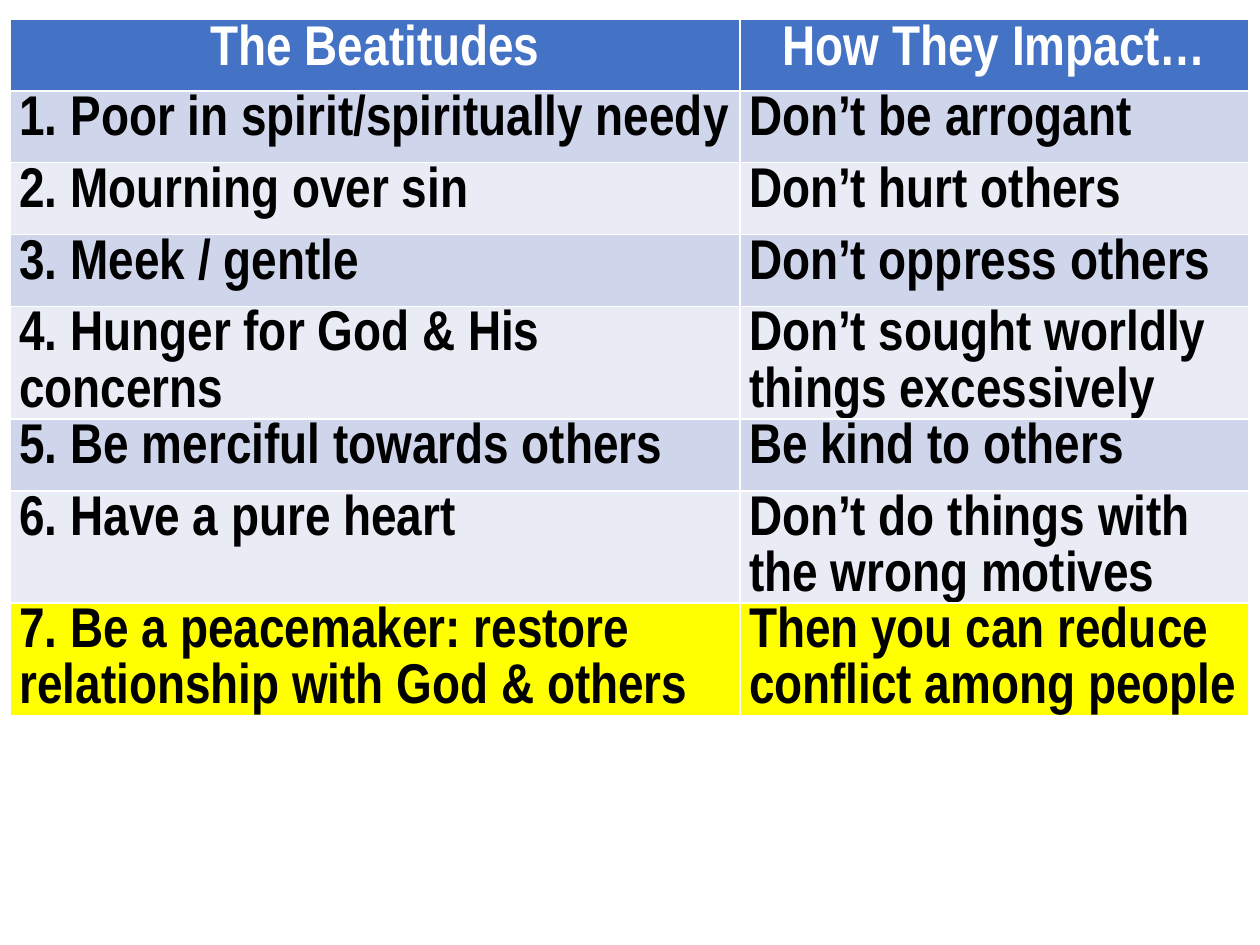
"""Build a slide with a table of the Beatitudes and their impact."""
from pptx import Presentation
from pptx.dml.color import RGBColor
from pptx.enum.text import PP_ALIGN
from pptx.util import Cm, Pt

CENTER, LEFT = PP_ALIGN.CENTER, PP_ALIGN.LEFT

ROWS = [
    ("The Beatitudes", "How They Impact…"),
    ("1. Poor in spirit/spiritually needy", "Don’t be arrogant"),
    ("2. Mourning over sin", "Don’t hurt others"),
    ("3. Meek / gentle", "Don’t oppress others"),
    ("4. Hunger for God & His concerns", "Don’t sought worldly things excessively"),
    ("5. Be merciful towards others", "Be kind to others"),
    ("6. Have a pure heart", "Don’t do things with the wrong motives"),
    ("7. Be a peacemaker: restore relationship with God & others",
     "Then you can reduce conflict among people"),
]
COL_WIDTHS = (14.71, 10.26)
ROW_HEIGHT = 1.45
HEADER_FILL, BAND_FILLS, HIGHLIGHT = "4472C4", ("E9EBF5", "CFD5EA"), "FFFF00"
FONT = {"name": "Arial Narrow", "size": Pt(32), "bold": True}
BODY_MARGINS = {"margin_left": Cm(0.18), "margin_right": Cm(0.18),
                "margin_top": 0, "margin_bottom": 0}
HEADER_PARA = {"alignment": CENTER}
BODY_PARA = {"alignment": LEFT, "line_spacing": 1.07}


def color(value):
    return RGBColor.from_string(value)


def apply(obj, values):
    for name, value in values.items():
        setattr(obj, name, value)


def row_fill(i):
    if i == 0:
        return HEADER_FILL
    return HIGHLIGHT if i == len(ROWS) - 1 else BAND_FILLS[i % 2]


def fill_cell(cell, text, i):
    header = i == 0
    cell.fill.solid()
    cell.fill.fore_color.rgb = color(row_fill(i))
    apply(cell, {} if header else BODY_MARGINS)
    p = cell.text_frame.paragraphs[0]
    apply(p, HEADER_PARA if header else BODY_PARA)
    r = p.add_run()
    r.text = text
    apply(r.font, FONT)
    r.font.color.rgb = color("FFFFFF" if header else "000000")


def main():
    prs = Presentation()
    prs.slide_width, prs.slide_height = Cm(25.4), Cm(19.05)
    s = prs.slides.add_slide(prs.slide_layouts[6])
    table = s.shapes.add_table(
        len(ROWS), len(COL_WIDTHS), Cm(0.21), Cm(0.38),
        Cm(sum(COL_WIDTHS)), Cm(ROW_HEIGHT * len(ROWS))).table
    for col, width in zip(table.columns, COL_WIDTHS):
        col.width = Cm(width)
    for i, texts in enumerate(ROWS):
        table.rows[i].height = Cm(ROW_HEIGHT)
        for j, text in enumerate(texts):
            fill_cell(table.cell(i, j), text, i)
    prs.save("out.pptx")


if __name__ == "__main__":
    main()
